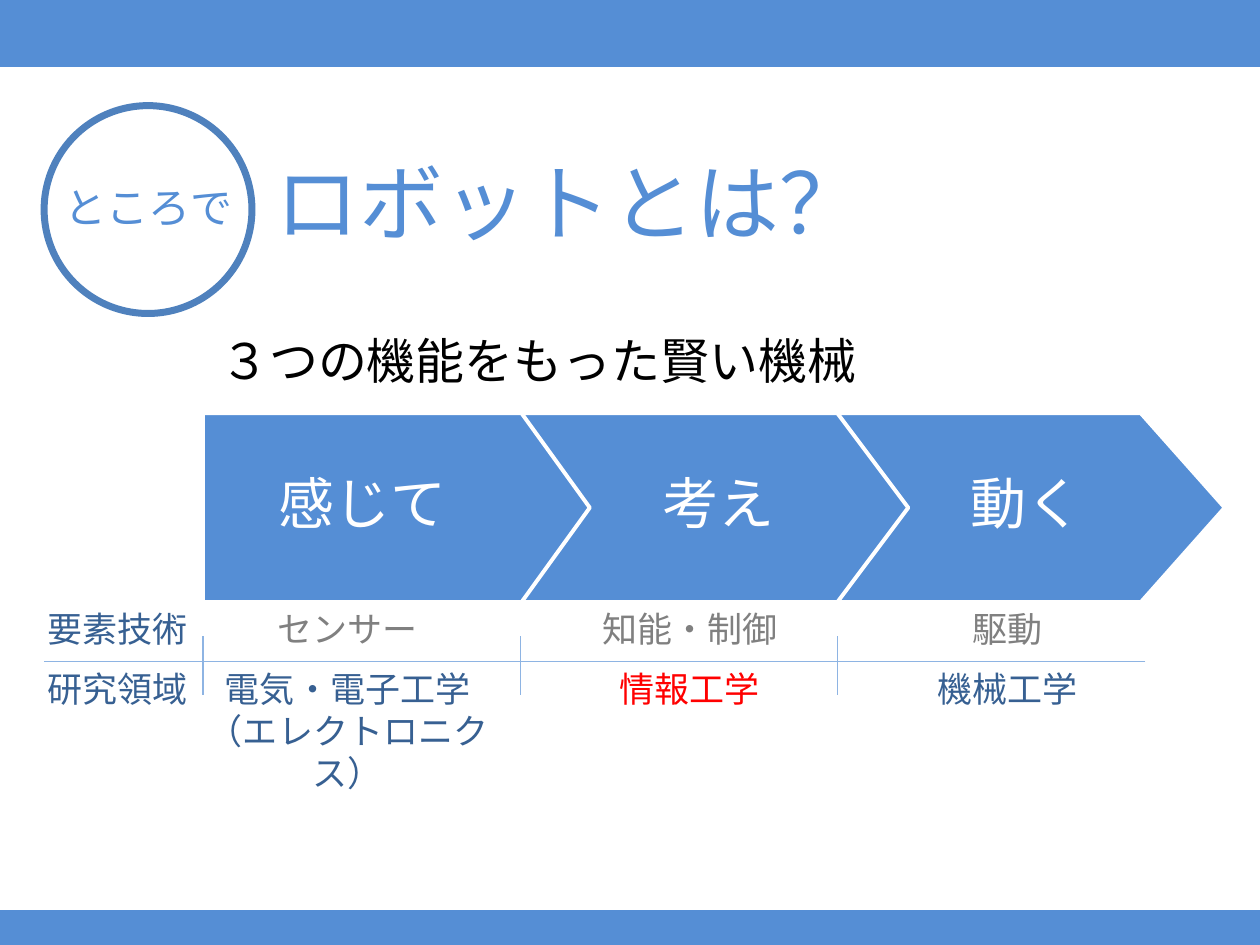
from lxml import etree
from pptx import Presentation
from pptx.dml.color import RGBColor
from pptx.enum.shapes import MSO_CONNECTOR, MSO_SHAPE
from pptx.enum.text import MSO_ANCHOR, PP_ALIGN
from pptx.oxml.ns import qn
from pptx.util import Cm, Pt

RECTANGLE, ELLIPSE = MSO_SHAPE.RECTANGLE, MSO_SHAPE.OVAL
PENTAGON = MSO_SHAPE.PENTAGON
STRAIGHT = MSO_CONNECTOR.STRAIGHT
LEFT, CENTER = PP_ALIGN.LEFT, PP_ALIGN.CENTER
TOP = MSO_ANCHOR.TOP

BLUE = RGBColor(0x55, 0x8E, 0xD5)
RING_BLUE = RGBColor(0x4F, 0x81, 0xBD)
RULE_BLUE = RGBColor(0x8E, 0xB4, 0xE3)
NAVY = RGBColor(0x37, 0x60, 0x92)
GRAY = RGBColor(0x80, 0x80, 0x80)
RED = RGBColor(0xFF, 0x00, 0x00)
BLACK = RGBColor(0x00, 0x00, 0x00)
WHITE = RGBColor(0xFF, 0xFF, 0xFF)


class RobotSlide:
    font_name = "Noto Sans CJK JP"

    def __init__(self, presentation):
        self.slide = presentation.slides.add_slide(presentation.slide_layouts[6])

    def shape(self, kind, left, top, width, height, *, fill=None, line, weight, point=None):
        shape = self.slide.shapes.add_shape(kind, Cm(left), Cm(top), Cm(width), Cm(height))
        shape.shadow.inherit = False
        if fill is None:
            shape.fill.background()
        else:
            shape.fill.solid()
            shape.fill.fore_color.rgb = fill
        shape.line.color.rgb = line
        shape.line.width = Pt(weight)
        if point is not None:
            shape.adjustments[0] = point

    def rule(self, x1, y1, x2, y2):
        rule = self.slide.shapes.add_connector(STRAIGHT, Cm(x1), Cm(y1), Cm(x2), Cm(y2))
        rule.line.color.rgb = RULE_BLUE
        rule.line.width = Pt(0.75)
        etree.SubElement(rule._element.spPr, qn("a:effectLst"))

    def text(self, text, left, top, width, height=1.4, *, size, color, align=CENTER):
        frame = self.slide.shapes.add_textbox(
            Cm(left), Cm(top), Cm(width), Cm(height)).text_frame
        frame.word_wrap = True
        frame.vertical_anchor = TOP
        frame.text = text
        for paragraph in frame.paragraphs:
            paragraph.alignment = align
            for run in paragraph.runs:
                run.font.size = Pt(size)
                run.font.color.rgb = color
                run.font.name = self.font_name
                east_asian = etree.SubElement(run.font._element, qn("a:ea"))
                east_asian.set("typeface", self.font_name)


def main():
    presentation = Presentation()
    presentation.slide_width, presentation.slide_height = Cm(25.4), Cm(19.05)
    robot = RobotSlide(presentation)

    for band_top, band_height in ((0, 1.32), (18.39, 0.74)):
        robot.shape(RECTANGLE, 0, band_top, 25.4, band_height, fill=BLUE, line=BLUE, weight=2)

    robot.shape(ELLIPSE, 0.89, 2.13, 4.19, 4.19, line=RING_BLUE, weight=4)
    robot.text("ところで", 0.89, 3.53, 4.19, 1.27, size=24, color=BLUE)
    robot.text("ロボットとは？", 5.31, 2.92, 20.09, size=48, color=BLUE, align=LEFT)
    robot.text("３つの機能をもった賢い機械", 4.19, 6.53, 20.09, size=28, color=BLACK, align=LEFT)

    arrows = ((15.7, 8.99, 0.444), (9.7, 8.61, 0.375), (4.09, 7.8, 0.361))
    for left, width, point in arrows:
        robot.shape(PENTAGON, left, 8.33, width, 3.81,
                    fill=BLUE, line=WHITE, weight=2.25, point=point)
    for function, left in (("感じて", 5.11), ("考え", 12.29), ("動く", 18.49)):
        robot.text(function, left, 9.32, 4.39, size=32, color=WHITE)

    technology_top, field_top = 12.12, 13.34
    columns = (
        (3.91, 6.2, "センサー", "電気・電子工学\n（エレクトロニクス）", NAVY),
        (11.51, 4.8, "知能・制御", "情報工学", RED),
        (17.7, 5.21, "駆動", "機械工学", NAVY),
    )
    for left, width, technology, field, field_color in columns:
        robot.text(technology, left, technology_top, width, size=20, color=GRAY)
        robot.text(field, left, field_top, width, size=20, color=field_color)
    for heading, top in (("要素技術", technology_top), ("研究領域", field_top)):
        robot.text(heading, 0.71, top, 6.2, size=20, color=NAVY, align=LEFT)

    robot.rule(23.09, field_top, 0.89, field_top)
    for column in range(3):
        divider = 4.09 + 6.4 * column
        robot.rule(divider, 12.83, divider, 14.02)

    presentation.save("out.pptx")


if __name__ == "__main__":
    main()
